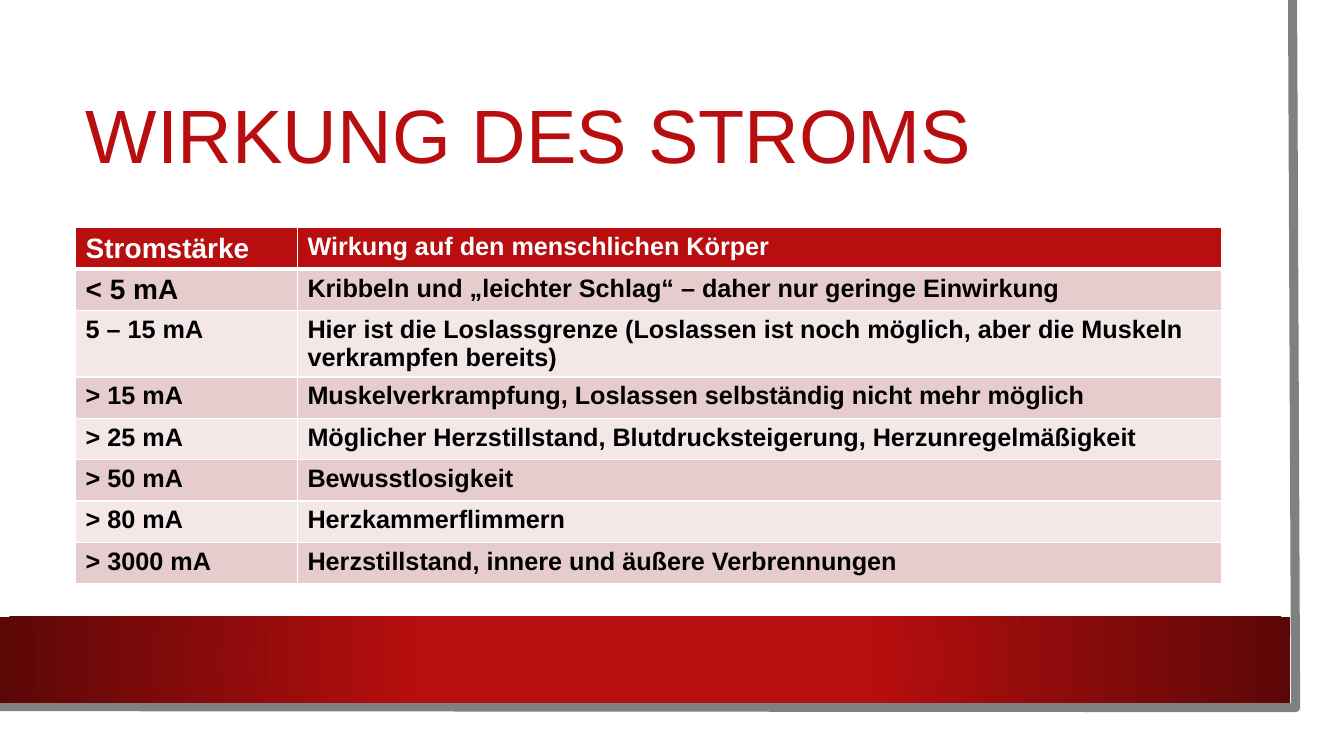
"""Build a slide with a table of the effects of electric current on the body."""
from lxml import etree
from pptx import Presentation
from pptx import util as u
from pptx.dml.color import RGBColor
from pptx.enum import shapes, text
from pptx.oxml import ns

PX = 9144
RED = RGBColor(0xB8, 0x0E, 0x0F)
DARK_RED = RGBColor(0x5C, 0x07, 0x07)
ROSE = RGBColor(0xE6, 0xCC, 0xCC)
PALE_ROSE = RGBColor(0xF3, 0xE7, 0xE7)
GREY = RGBColor(0x80, 0x80, 0x80)
WHITE = RGBColor(0xFF, 0xFF, 0xFF)
BLACK = RGBColor(0, 0, 0)
FONT = "Arial"

EFFECTS = [
    ("Stromstärke", "Wirkung auf den menschlichen Körper"),
    ("< 5 mA", "Kribbeln und „leichter Schlag“ – daher nur geringe Einwirkung"),
    ("5 – 15 mA", "Hier ist die Loslassgrenze (Loslassen ist noch möglich, "
                  "aber die Muskeln verkrampfen bereits)"),
    ("> 15 mA", "Muskelverkrampfung, Loslassen selbständig nicht mehr möglich"),
    ("> 25 mA", "Möglicher Herzstillstand, Blutdrucksteigerung, Herzunregelmäßigkeit"),
    ("> 50 mA", "Bewusstlosigkeit"),
    ("> 80 mA", "Herzkammerflimmern"),
    ("> 3000 mA", "Herzstillstand, innere und äußere Verbrennungen"),
]
COLUMN_WIDTHS = (220, 917)
ROW_HEIGHT = 41


def px(*lengths):
    """Turn pixel lengths into EMU."""
    return [length * PX for length in lengths]


def add_panel(page, *place):
    """Add a plain rectangle without line or shadow."""
    panel = page.shapes.add_shape(shapes.MSO_SHAPE.RECTANGLE, *px(*place))
    panel.shadow.inherit = False
    panel.line.fill.background()
    return panel


def shade_from_centre(fill):
    """Fill with red that darkens outwards from the centre."""
    fill.gradient()
    for stop, position, colour in zip(fill.gradient_stops, (0.34, 1), (RED, DARK_RED)):
        stop.position = position
        stop.color.rgb = colour


def make_radial(shape):
    """Turn the linear gradient of a shape into a circular one."""
    linear = shape.element.find(".//" + ns.qn("a:lin"))
    circle = etree.Element(ns.qn("a:path"), path="circle")
    etree.SubElement(circle, ns.qn("a:fillToRect"),
                     dict.fromkeys("ltrb", "50000"))
    linear.getparent().replace(linear, circle)


def add_edge(page):
    """Draw the grey edge on the right and at the bottom."""
    builder = page.shapes.build_freeform(1282, 0, scale=PX)
    builder.add_line_segments([(1285, 702), (-3, 701)], close=False)
    edge = builder.convert_to_shape()
    edge.shadow.inherit = False
    edge.fill.background()
    edge.line.color.rgb = GREY
    edge.line.width = u.Pt(6.5)


def set_title(page, wording):
    """Place and format the title in front of the backdrop."""
    title = page.shapes.title
    title.element.getparent().append(title.element)
    title.left, title.top, title.width, title.height = px(75, 75, 1137, 126)
    frame = title.text_frame
    frame.text = wording
    frame.vertical_anchor = text.MSO_ANCHOR.MIDDLE
    para = frame.paragraphs[0]
    para.alignment = text.PP_ALIGN.LEFT
    para.line_spacing = 0.9
    para.font.size, para.font.name = u.Pt(54), FONT
    para.font.color.rgb = RED


def set_borders(cell, bottom):
    """Give a cell white borders, with the bottom width in points."""
    properties = cell._tc.get_or_add_tcPr()
    for index, (side, width) in enumerate(zip("LRTB", (1, 1, 1, bottom))):
        line = etree.Element(ns.qn("a:ln" + side), w=str(u.Pt(width)))
        solid = etree.SubElement(line, ns.qn("a:solidFill"))
        etree.SubElement(solid, ns.qn("a:srgbClr"), val=str(WHITE))
        properties.insert(index, line)


def fill_cell(cell, wording, size, colour, background, bottom):
    """Write bold text into a cell and colour it."""
    cell.text = wording
    font = cell.text_frame.paragraphs[0].font
    font.size, font.name, font.bold = u.Pt(size), FONT, True
    font.color.rgb = colour
    cell.fill.solid()
    cell.fill.fore_color.rgb = background
    set_borders(cell, bottom)


def add_effects_table(page):
    """Add the table of current strengths and their effects."""
    place = px(75, 226, sum(COLUMN_WIDTHS), ROW_HEIGHT * len(EFFECTS))
    table = page.shapes.add_table(len(EFFECTS), len(COLUMN_WIDTHS), *place).table
    for column, width in zip(table.columns, COLUMN_WIDTHS):
        column.width = width * PX
    for r, effect in enumerate(EFFECTS):
        table.rows[r].height = ROW_HEIGHT * PX
        header = r == 0
        background = RED if header else ROSE if r % 2 else PALE_ROSE
        for c, wording in enumerate(effect):
            size = 20 if c == 0 and r < 2 else 18
            fill_cell(table.cell(r, c), wording, size, WHITE if header else BLACK,
                      background, 3 if header else 1)


def main():
    """Build and save the slide."""
    deck = Presentation()
    deck.slide_width, deck.slide_height = px(1333, 750)
    page = deck.slides.add_slide(deck.slide_layouts[5])
    card = add_panel(page, 0, 0, 1310, 727)
    card.fill.solid()
    card.fill.fore_color.rgb = WHITE
    add_edge(page)
    band = add_panel(page, 0, 612, 1280, 85)
    shade_from_centre(band.fill)
    make_radial(band)
    set_title(page, "WIRKUNG DES STROMS")
    add_effects_table(page)
    deck.save("out.pptx")


if __name__ == "__main__":
    main()
